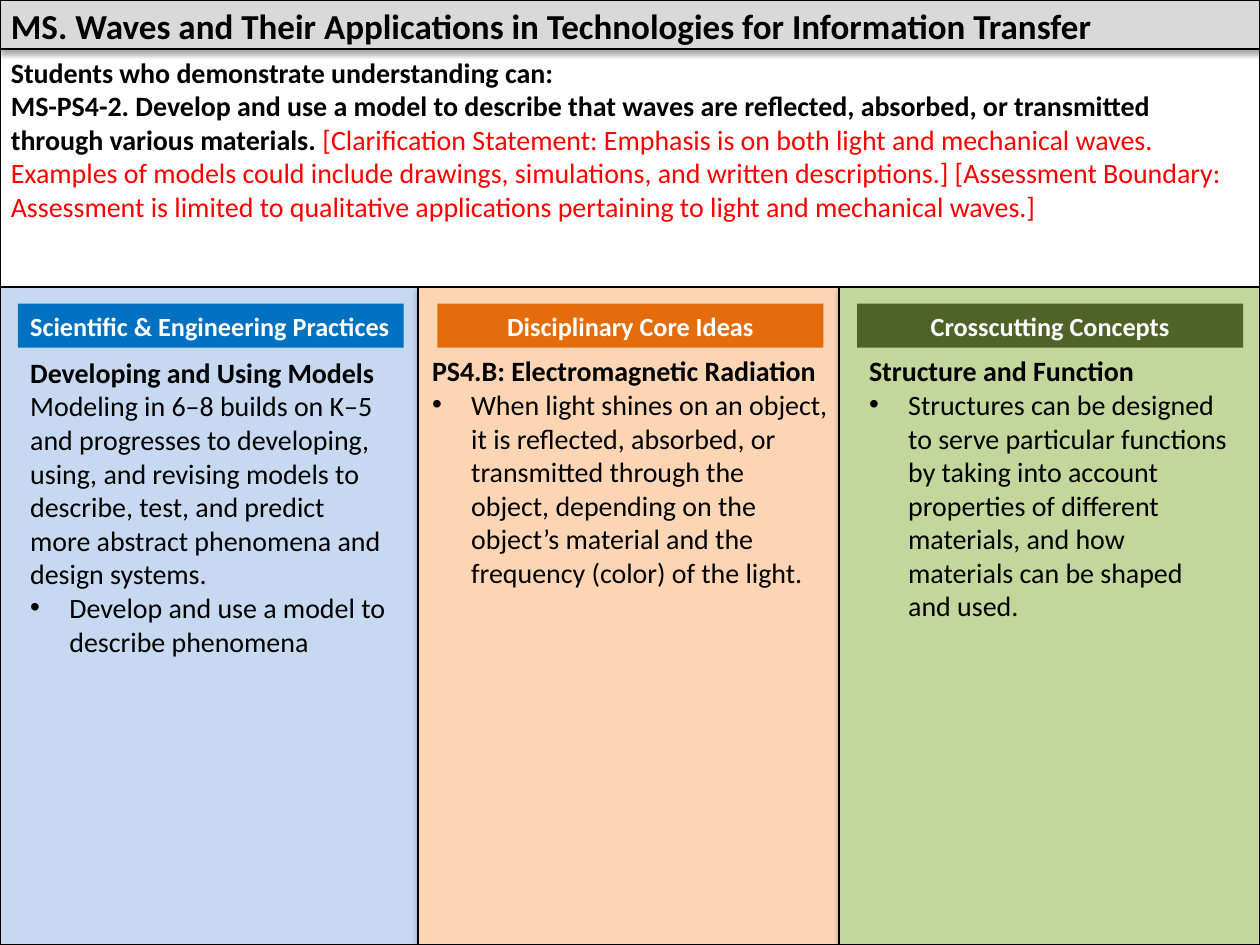
from dataclasses import dataclass

from lxml.etree import SubElement
from pptx import Presentation
from pptx.dml.color import RGBColor
from pptx.enum.shapes import MSO_SHAPE
from pptx.enum.text import MSO_ANCHOR, PP_ALIGN
from pptx.oxml.ns import qn
from pptx.util import Cm, Pt


@dataclass(frozen=True)
class Theme:
    font: str = "Calibri"
    title_size: int = 20
    body_size: int = 16
    label_size: int = 15
    line_width: float = 0.75
    black: str = "000000"
    white: str = "FFFFFF"
    red: str = "FF0000"
    title_fill: str = "D9D9D9"
    panel_fills: tuple = ("C6D9F1", "FCD5B5", "C3D69B")
    label_fills: tuple = ("0070C0", "E46C0A", "4F6228")


@dataclass(frozen=True)
class Column:
    label: str
    alignment: PP_ALIGN
    panel_left: float
    panel_width: float
    body_box: tuple
    paragraphs: tuple


THEME = Theme()
SLIDE_WIDTH, SLIDE_HEIGHT = 25.4, 19.05
TITLE_HEIGHT = 0.99
PANEL_TOP = 5.79
LABEL_LEFT, LABEL_STEP = 0.36, 8.46
LABEL_TOP, LABEL_WIDTH, LABEL_HEIGHT = 6.12, 7.78, 0.89
BULLET_INDENT = 0.79

TITLE = "MS. Waves and Their Applications in Technologies for Information Transfer"
EXPECTATION = (
    ("Students who demonstrate understanding can:", "", False),
    (
        "MS-PS4-2. Develop and use a model to describe that waves are reflected, "
        "absorbed, or transmitted through various materials. ",
        "[Clarification Statement: Emphasis is on both light and mechanical waves. "
        "Examples of models could include drawings, simulations, and written "
        "descriptions.] [Assessment Boundary: Assessment is limited to qualitative "
        "applications pertaining to light and mechanical waves.]",
        False,
    ),
)
COLUMNS = (
    Column(
        "Scientific & Engineering Practices", PP_ALIGN.LEFT, 0, 8.43,
        (0.36, 7.04, 7.77, 6.4),
        (
            (
                "Developing and Using Models ",
                "Modeling in 6–8 builds on K–5 and progresses to developing, using, "
                "and revising models to describe, test, and predict more abstract "
                "phenomena and design systems.",
                False,
            ),
            ("", "Develop and use a model to describe phenomena", True),
        ),
    ),
    Column(
        "Disciplinary Core Ideas", PP_ALIGN.CENTER, 8.43, 8.48,
        (8.46, 7.01, 8.48, 6.4),
        (
            ("PS4.B: Electromagnetic Radiation", "", False),
            (
                "",
                "When light shines on an object, it is reflected, absorbed, or "
                "transmitted through the object, depending on the object’s material "
                "and the frequency (color) of the light.",
                True,
            ),
        ),
    ),
    Column(
        "Crosscutting Concepts", PP_ALIGN.CENTER, 16.92, 8.48,
        (17.27, 7.01, 7.77, 5.74),
        (
            ("Structure and Function", "", False),
            (
                "",
                "Structures can be designed to serve particular functions by taking "
                "into account properties of different materials, and how materials "
                "can be shaped and used.",
                True,
            ),
        ),
    ),
)


def format_run(run, size, color, bold):
    run.font.name = THEME.font
    run.font.size = Pt(size)
    run.font.bold = bold
    run.font.color.rgb = RGBColor.from_string(color)


def add_rectangle(slide, box, fill):
    shape = slide.shapes.add_shape(MSO_SHAPE.RECTANGLE, *map(Cm, box))
    shape.shadow.inherit = False
    shape.fill.solid()
    shape.fill.fore_color.rgb = RGBColor.from_string(fill)
    shape.line.fill.background()
    return shape


def add_panel(slide, box, fill):
    shape = add_rectangle(slide, box, fill)
    shape.line.color.rgb = RGBColor.from_string(THEME.black)
    shape.line.width = Pt(THEME.line_width)
    effects = shape.element.spPr.find(qn("a:effectLst"))
    shadow = SubElement(
        effects, qn("a:outerShdw"), blurRad=str(Pt(3.1)), dist=str(Pt(1.8)),
        dir="5400000", rotWithShape="0",
    )
    color = SubElement(shadow, qn("a:srgbClr"), val=THEME.black)
    SubElement(color, qn("a:alpha"), val="35000")


def add_label(slide, box, fill, text, alignment):
    shape = add_rectangle(slide, box, fill)
    text_frame = shape.text_frame
    text_frame.word_wrap = True
    text_frame.vertical_anchor = MSO_ANCHOR.MIDDLE
    text_frame.text = text
    paragraph = text_frame.paragraphs[0]
    paragraph.alignment = alignment
    format_run(paragraph.runs[0], THEME.label_size, THEME.white, True)


def add_bullet(paragraph):
    properties = paragraph._p.get_or_add_pPr()
    properties.set("marL", str(Cm(BULLET_INDENT)))
    properties.set("indent", str(-Cm(BULLET_INDENT)))
    SubElement(properties, qn("a:buFont"), typeface="Arial")
    SubElement(properties, qn("a:buChar"), char="•")


def add_text(slide, box, paragraphs, size, plain_color=THEME.black):
    """Write paragraphs given as bold lead, plain remainder and bullet flag."""
    text_frame = slide.shapes.add_textbox(*map(Cm, box)).text_frame
    text_frame.word_wrap = True
    for index, (lead, remainder, bulleted) in enumerate(paragraphs):
        paragraph = text_frame.add_paragraph() if index else text_frame.paragraphs[0]
        if bulleted:
            add_bullet(paragraph)
        paragraph.text = lead or remainder
        format_run(paragraph.runs[0], size, THEME.black, bool(lead))
        if lead and remainder:
            run = paragraph.add_run()
            run.text = remainder
            format_run(run, size, plain_color, False)


def main():
    presentation = Presentation()
    presentation.slide_width = Cm(SLIDE_WIDTH)
    presentation.slide_height = Cm(SLIDE_HEIGHT)
    slide = presentation.slides.add_slide(presentation.slide_layouts[6])

    expectation_height = PANEL_TOP - TITLE_HEIGHT
    add_panel(slide, (0, TITLE_HEIGHT, SLIDE_WIDTH, expectation_height), THEME.white)
    for column, fill in zip(COLUMNS, THEME.panel_fills):
        panel_height = SLIDE_HEIGHT - PANEL_TOP
        box = (column.panel_left, PANEL_TOP, column.panel_width, panel_height)
        add_panel(slide, box, fill)
    add_panel(slide, (0, 0, SLIDE_WIDTH, TITLE_HEIGHT), THEME.title_fill)

    title_box = (-0.03, -0.03, SLIDE_WIDTH, 1.11)
    add_text(slide, title_box, ((TITLE, "", False),), THEME.title_size)
    expectation_box = (-0.03, TITLE_HEIGHT, 25.37, 3.68)
    add_text(slide, expectation_box, EXPECTATION, THEME.body_size, THEME.red)

    for index, (column, fill) in enumerate(zip(COLUMNS, THEME.label_fills)):
        left = LABEL_LEFT + index * LABEL_STEP
        box = (left, LABEL_TOP, LABEL_WIDTH, LABEL_HEIGHT)
        add_label(slide, box, fill, column.label, column.alignment)
        add_text(slide, column.body_box, column.paragraphs, THEME.body_size)

    presentation.save("out.pptx")


if __name__ == "__main__":
    main()
